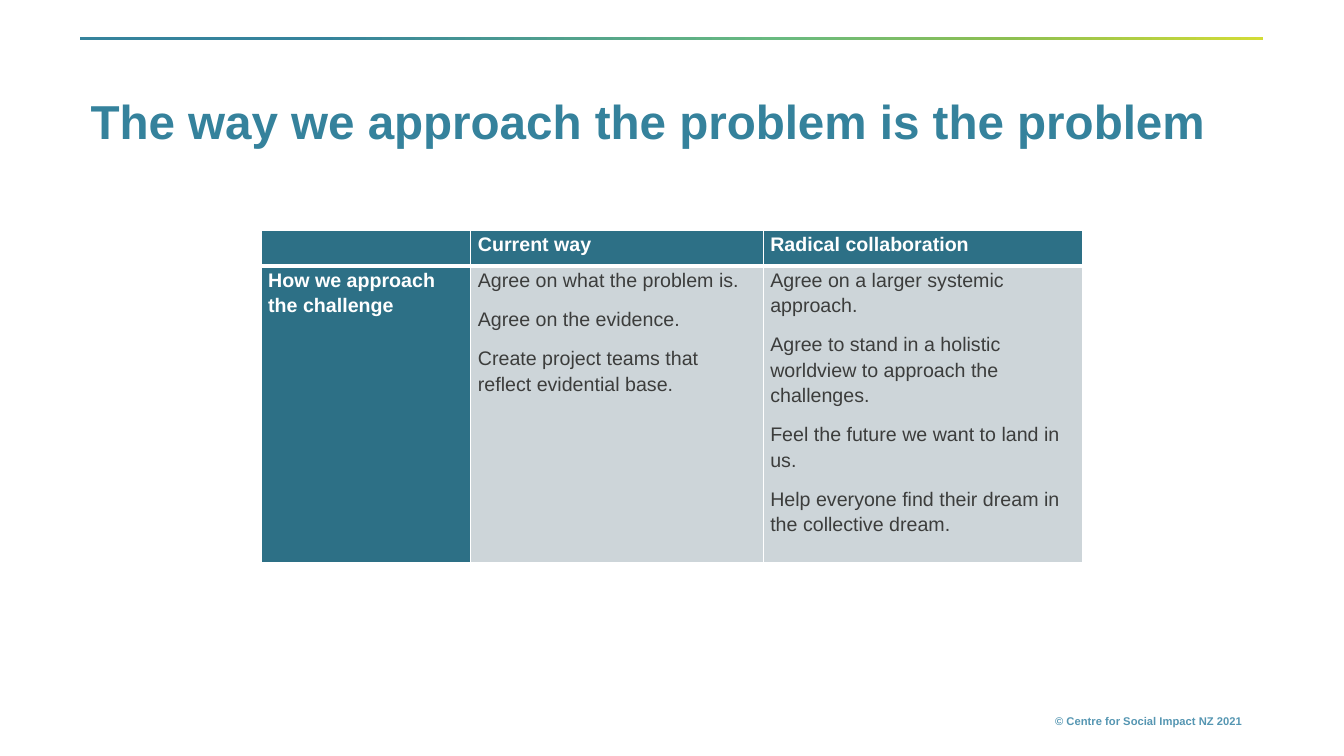
import pptx
import pptx.dml.color
import pptx.enum.shapes
import pptx.enum.text
import pptx.oxml
import pptx.oxml.ns
import pptx.util

PX = 9144  # EMU in one px, 100 px to the inch
TEAL, WHITE, INK, GREY = "2D7086", "FFFFFF", "3C3D3C", "CDD5D9"
RULE_STOPS = [(0, "35839C"), (20, "35839C"), (59, "69BA80"), (78, "8CBF52"), (100, "D2DC36")]
COLUMNS, ROWS = [208, 290, 317], [35, 294]
CELLS = [
    [[], ["Current way"], ["Radical collaboration"]],
    [
        ["How we approach the challenge"],
        ["Agree on what the problem is.", "Agree on the evidence.",
         "Create project teams that reflect evidential base."],
        ["Agree on a larger systemic approach.",
         "Agree to stand in a holistic worldview to approach the challenges.",
         "Feel the future we want to land in us.",
         "Help everyone find their dream in the collective dream."],
    ],
]


def emu(*lengths):
    return [pptx.util.Emu(n * PX) for n in lengths]


def rgb(value):
    return pptx.dml.color.RGBColor.from_string(value)


def xml(body):
    return pptx.oxml.parse_xml(body.replace(">", f" {pptx.oxml.ns.nsdecls('a')}>", 1))


def set_all(target, values):
    for name, value in values.items():
        setattr(target, name, value)


def write(tf, texts, size, color, bold, **paragraph):
    """Fill a text frame with one paragraph per text."""
    for i, text in enumerate(texts or [""]):
        p = tf.paragraphs[0] if i == 0 else tf.add_paragraph()
        set_all(p, paragraph)
        set_all(p.font, {"name": "Arial", "size": pptx.util.Pt(size), "bold": bold})
        p.font.color.rgb = rgb(color)
        if text:
            r = p.add_run()
            r.text = text
            set_all(r.font, {"name": "Arial", "size": pptx.util.Pt(size), "bold": bold})
            r.font.color.rgb = rgb(color)


def add_text(slide, box, text, size, color, **paragraph):
    tf = slide.shapes.add_textbox(*emu(*box)).text_frame
    set_all(tf, {"word_wrap": True, "vertical_anchor": pptx.enum.text.MSO_ANCHOR.MIDDLE})
    write(tf, [text], size, color, True, **paragraph)


def add_rule(slide, box):
    """Add the thin gradient bar across the top."""
    sp = slide.shapes.add_shape(pptx.enum.shapes.MSO_SHAPE.RECTANGLE, *emu(*box))
    sp.shadow.inherit = False
    sp.line.fill.background()
    sp.fill.gradient()
    sp.fill.gradient_angle = 0
    stops = sp.fill.gradient_stops
    gs_list = sp.element.spPr.find(".//" + pptx.oxml.ns.qn("a:gsLst"))
    for gs in list(gs_list):
        gs_list.remove(gs)
    for position, color in RULE_STOPS:
        gs_list.append(xml(f'<a:gs pos="{position * 1000}"><a:srgbClr val="{color}"/></a:gs>'))


def format_cell(cell, texts, row, col):
    is_label = row == 0 or col == 0
    margin, zero = emu(7, 0)
    set_all(cell, {"margin_left": margin, "margin_right": margin,
                   "margin_top": zero, "margin_bottom": zero})
    tc_pr = cell._tc.get_or_add_tcPr()
    heavy = "B" if row == 0 else "T"
    for side in "LRTB":
        width = pptx.util.Pt(3 if side == heavy else 1)
        tc_pr.append(xml(f'<a:ln{side} w="{width}"><a:solidFill><a:srgbClr val="{WHITE}"/>'
                         f'</a:solidFill></a:ln{side}>'))
    cell.fill.solid()
    cell.fill.fore_color.rgb = rgb(TEAL if is_label else GREY)
    write(cell.text_frame, texts, 14, WHITE if is_label else INK, is_label,
          line_spacing=1.15, space_after=pptx.util.Pt(10))


def add_comparison(slide, left, top):
    box = emu(left, top, sum(COLUMNS), sum(ROWS))
    table = slide.shapes.add_table(len(ROWS), len(COLUMNS), *box).table
    for column, width in zip(table.columns, emu(*COLUMNS)):
        column.width = width
    for row, height in zip(table.rows, emu(*ROWS)):
        row.height = height
    for i, row in enumerate(CELLS):
        for j, texts in enumerate(row):
            format_cell(table.cell(i, j), texts, i, j)


def main():
    prs = pptx.Presentation()
    prs.slide_width, prs.slide_height = emu(1333, 750)
    slide = prs.slides.add_slide(prs.slide_layouts[6])
    add_text(slide, (889, 703, 353, 24), "© Centre for Social Impact NZ 2021", 8, "5596B2",
             alignment=pptx.enum.text.PP_ALIGN.RIGHT)
    add_rule(slide, (79, 37, 1174, 3))
    add_text(slide, (80, 77, 1173, 92), "The way we approach the problem is the problem",
             34, "35829C", line_spacing=0.9)
    add_comparison(slide, 259, 229)
    prs.save("out.pptx")


if __name__ == "__main__":
    main()
